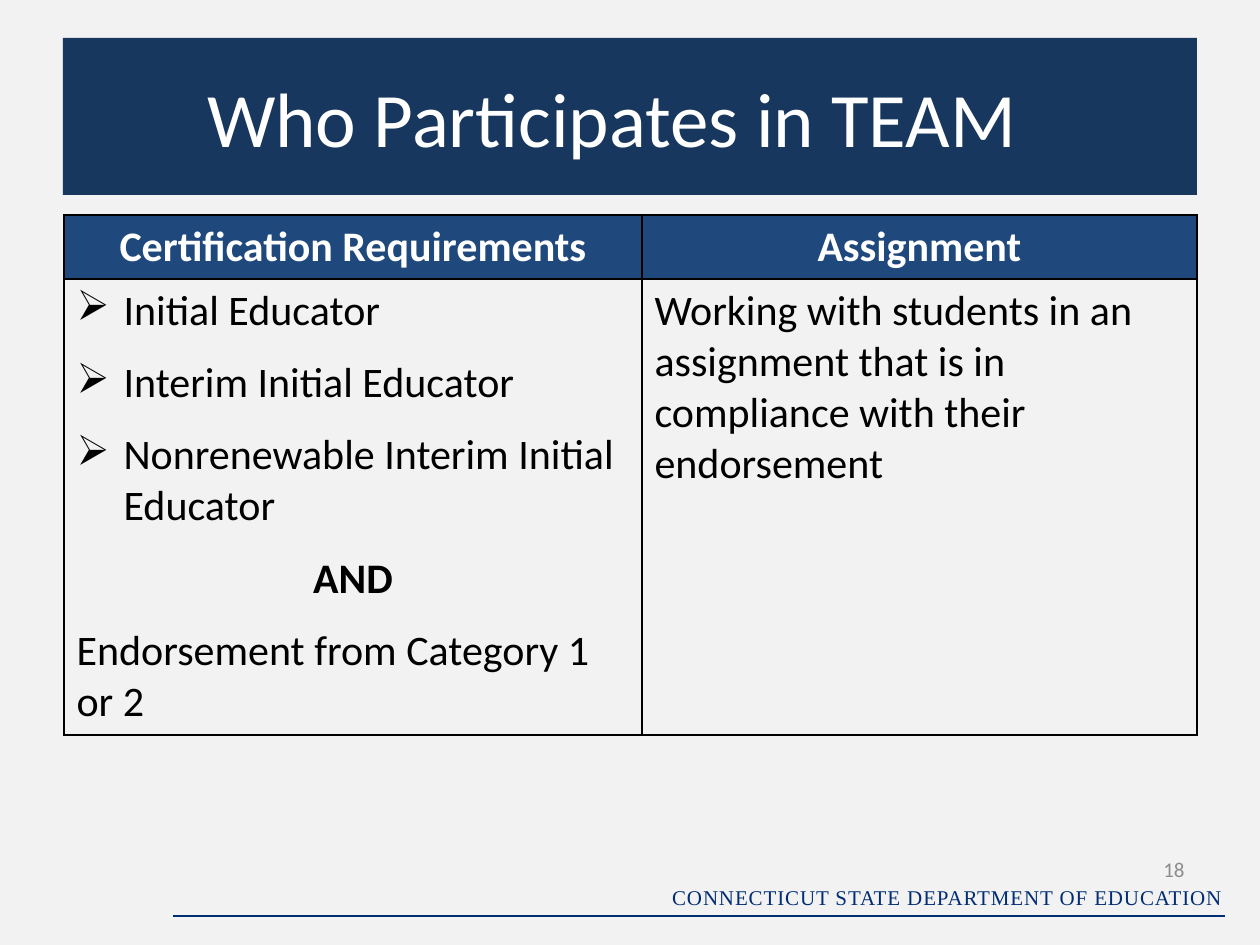
from lxml import etree
from pptx import Presentation
from pptx.dml.color import RGBColor
from pptx.enum.shapes import MSO_CONNECTOR, MSO_SHAPE
from pptx.enum.text import MSO_ANCHOR, PP_ALIGN
from pptx.oxml.ns import qn
from pptx.util import Pt

LEFT, CENTER, RIGHT = PP_ALIGN.LEFT, PP_ALIGN.CENTER, PP_ALIGN.RIGHT
TOP, MIDDLE = MSO_ANCHOR.TOP, MSO_ANCHOR.MIDDLE
RECTANGLE, STRAIGHT = MSO_SHAPE.RECTANGLE, MSO_CONNECTOR.STRAIGHT

PAPER = RGBColor(0xF2, 0xF2, 0xF2)
BANNER = RGBColor(0x17, 0x37, 0x5E)
HEADER = RGBColor(0x1F, 0x49, 0x7D)
FOOTER = RGBColor(0x00, 0x2D, 0x73)
GRAY = RGBColor(0x8C, 0x8C, 0x8C)
WHITE = RGBColor(0xFF, 0xFF, 0xFF)
BLACK = RGBColor(0x00, 0x00, 0x00)

TITLE = "Who Participates in TEAM"
DEPARTMENT = "CONNECTICUT STATE DEPARTMENT OF EDUCATION"
SLIDE_NUMBER = "18"
HEADINGS = ["Certification Requirements", "Assignment"]
BODY = [
    [
        ("Initial Educator", "bullet"),
        ("Interim Initial Educator", "bullet"),
        ("Nonrenewable Interim Initial Educator", "bullet"),
        ("AND", "joiner"),
        ("Endorsement from Category 1 or 2", "plain"),
    ],
    [("Working with students in an assignment that is in compliance with their endorsement", "plain")],
]

FORMATS = {
    "title": {"size": 44, "color": WHITE, "align": CENTER},
    "heading": {"size": 24, "color": WHITE, "bold": True, "align": CENTER},
    "plain": {"size": 24, "after": 12},
    "bullet": {"size": 24, "after": 12, "bullet": "➢"},
    "joiner": {"size": 24, "bold": True, "after": 12, "align": CENTER},
    "number": {"size": 12, "color": GRAY, "align": RIGHT},
    "footer": {"size": 12, "color": FOOTER, "font": "Times New Roman", "spacing": 50, "align": RIGHT},
}

SCALE = 914400 // 126
SLIDE_SIZE = (1260, 945)
TITLE_BOX = (63, 38, 1134, 157)
TITLE_RIGHT_INSET = 48
TABLE_BOX = (64, 215, 1133, 520)
COLUMN_WIDTHS = [578, 555]
ROW_HEIGHTS = [64, 456]
NUMBER_BOX = (1130, 844, 67, 50)
FOOTER_BOX = (653, 878, 582, 38)
FOOTER_LINE = (173, 916, 1225, 916)
BULLET_INDENT = 47


def emu(*lengths):
    return [length * SCALE for length in lengths]


def write(frame, lines):
    frame.word_wrap = True
    for index, (text, kind) in enumerate(lines):
        style = FORMATS[kind]
        paragraph = frame.paragraphs[0] if index == 0 else frame.add_paragraph()
        paragraph.alignment = style.get("align", LEFT)
        paragraph.space_after = Pt(style.get("after", 0))
        run = paragraph.add_run()
        run.text = text
        font_values = {
            "name": style.get("font", "Calibri"),
            "size": Pt(style["size"]),
            "bold": style.get("bold", False),
        }
        for name, value in font_values.items():
            setattr(run.font, name, value)
        run.font.color.rgb = style.get("color", BLACK)
        if "spacing" in style:
            run.font._element.set("spc", str(style["spacing"]))
        if "bullet" in style:
            properties = paragraph._p.get_or_add_pPr()
            indent = BULLET_INDENT * SCALE
            properties.set("marL", str(indent))
            properties.set("indent", str(-indent))
            etree.SubElement(properties, qn("a:buChar")).set("char", style["bullet"])


def add_text(slide, box, text, kind, anchor):
    frame = slide.shapes.add_textbox(*emu(*box)).text_frame
    frame.vertical_anchor = anchor
    write(frame, [(text, kind)])


def add_borders(cell):
    properties = cell._tc.get_or_add_tcPr()
    for index, side in enumerate(("lnL", "lnR", "lnT", "lnB")):
        border = etree.Element(qn(f"a:{side}"), w=str(Pt(1)))
        fill = etree.SubElement(border, qn("a:solidFill"))
        etree.SubElement(fill, qn("a:srgbClr")).set("val", str(BLACK))
        properties.insert(index, border)


def add_footer(slide):
    line = slide.shapes.add_connector(STRAIGHT, *emu(*FOOTER_LINE))
    line.line.color.rgb = FOOTER
    line.line.width = Pt(0.75)
    etree.SubElement(line._element.spPr, qn("a:effectLst"))
    add_text(slide, FOOTER_BOX, DEPARTMENT, "footer", TOP)


def add_title(slide):
    banner = slide.shapes.add_shape(RECTANGLE, *emu(*TITLE_BOX))
    banner.shadow.inherit = False
    banner.fill.solid()
    banner.fill.fore_color.rgb = BANNER
    banner.line.fill.background()
    frame = banner.text_frame
    frame.vertical_anchor = MIDDLE
    frame.margin_right = TITLE_RIGHT_INSET * SCALE
    write(frame, [(TITLE, "title")])


def add_requirements(slide):
    rows = [[[(heading, "heading")] for heading in HEADINGS], BODY]
    table = slide.shapes.add_table(len(rows), len(HEADINGS), *emu(*TABLE_BOX)).table
    for column, width in zip(table.columns, emu(*COLUMN_WIDTHS)):
        column.width = width
    for row, height in zip(table.rows, emu(*ROW_HEIGHTS)):
        row.height = height
    for row_index, (contents, color) in enumerate(zip(rows, (HEADER, PAPER))):
        for column_index, lines in enumerate(contents):
            cell = table.cell(row_index, column_index)
            cell.fill.solid()
            cell.fill.fore_color.rgb = color
            add_borders(cell)
            write(cell.text_frame, lines)


def main():
    presentation = Presentation()
    presentation.slide_width, presentation.slide_height = emu(*SLIDE_SIZE)
    slide = presentation.slides.add_slide(presentation.slide_layouts[6])
    slide.background.fill.solid()
    slide.background.fill.fore_color.rgb = PAPER
    add_footer(slide)
    add_title(slide)
    add_requirements(slide)
    add_text(slide, NUMBER_BOX, SLIDE_NUMBER, "number", MIDDLE)
    presentation.save("out.pptx")


if __name__ == "__main__":
    main()
